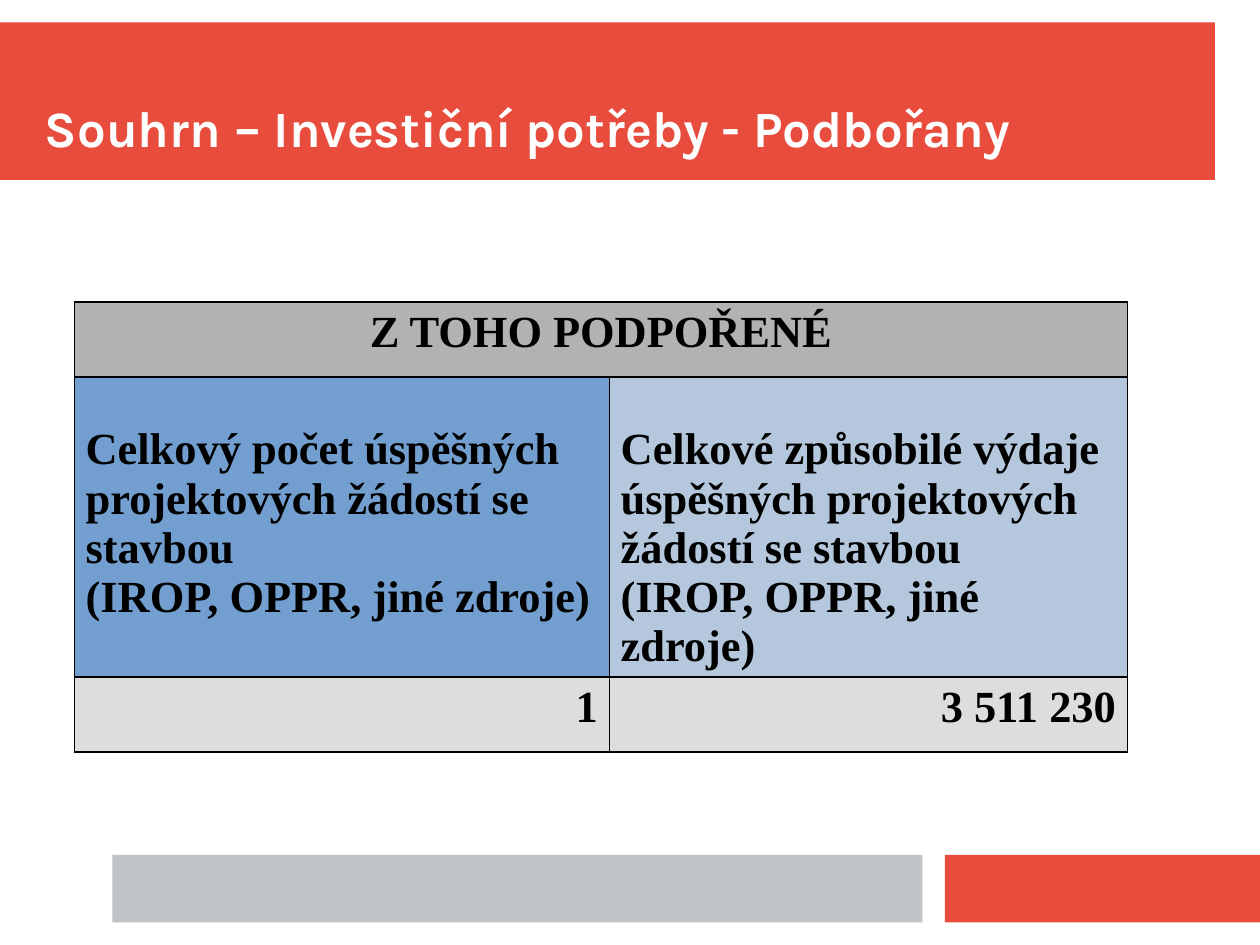
from dataclasses import dataclass

from lxml import etree
from pptx import Presentation
from pptx import util as u
from pptx.dml.color import RGBColor
from pptx.enum import shapes, text
from pptx.oxml import ns

COLUMNS, ROWS = 28, 21
WIDTH, HEIGHT = u.Cm(28), u.Cm(21)


@dataclass(frozen=True)
class Theme:
    red: str = "E74C3C"
    silver: str = "BDC3C7"
    white: str = "FFFFFF"
    black: str = "000000"
    heading: str = "B2B2B2"
    count: str = "729FCF"
    expense: str = "B4C7DC"
    values: str = "DDDDDD"
    title_font: str = "Karla"
    table_font: str = "Times New Roman"
    title_size: int = 32
    table_size: int = 28
    border: float = 1


THEME = Theme()


def across(columns):
    return round(WIDTH * columns / COLUMNS)


def down(rows):
    return round(HEIGHT * rows / ROWS)


def grid(left, top, width, height):
    return across(left), down(top), across(width), down(height)


def write(frame, lines, font=THEME.table_font, size=THEME.table_size,
          color=THEME.black, align=text.PP_ALIGN.LEFT):
    for index, line in enumerate(lines):
        para = frame.paragraphs[0] if index == 0 else frame.add_paragraph()
        para.alignment = align
        span = para.add_run()
        span.text = line
        span.font.name = font
        span.font.size = u.Pt(size)
        span.font.bold = True
        span.font.color.rgb = RGBColor.from_string(color)


def add_band(page, place, color):
    band = page.shapes.add_shape(shapes.MSO_SHAPE.RECTANGLE, *grid(*place))
    band.shadow.inherit = False
    band.fill.solid()
    band.fill.fore_color.rgb = RGBColor.from_string(color)
    band.line.fill.background()


def place_title(page, place, words):
    title = page.shapes.title
    title.element.getparent().append(title.element)
    title.left, title.top, title.width, title.height = grid(*place)
    frame = title.text_frame
    frame.margin_left = frame.margin_right = 0
    frame.margin_top = frame.margin_bottom = 0
    frame.word_wrap = True
    frame.auto_size = text.MSO_AUTO_SIZE.NONE
    frame.vertical_anchor = text.MSO_ANCHOR.BOTTOM
    write(frame, [words], font=THEME.title_font, size=THEME.title_size,
          color=THEME.white)


def style_cell(cell, color):
    properties = cell._tc.get_or_add_tcPr()
    for side in ("a:lnL", "a:lnR", "a:lnT", "a:lnB"):
        line = etree.SubElement(properties, ns.qn(side), w=str(u.Pt(THEME.border)))
        fill = etree.SubElement(line, ns.qn("a:solidFill"))
        etree.SubElement(fill, ns.qn("a:srgbClr"), val=THEME.black)
    cell.fill.solid()
    cell.fill.fore_color.rgb = RGBColor.from_string(color)


def add_summary(page, left, top, widths, heights, colors):
    place = grid(left, top, sum(widths), sum(heights))
    table = page.shapes.add_table(len(heights), len(widths), *place).table
    for column, width in zip(table.columns, widths):
        column.width = across(width)
    for row, height, fills in zip(table.rows, heights, colors):
        row.height = down(height)
        for cell, color in zip(row.cells, fills):
            style_cell(cell, color)
    table.cell(0, 0).merge(table.cell(0, len(widths) - 1))
    return table


def main():
    deck = Presentation()
    deck.slide_width = WIDTH
    deck.slide_height = HEIGHT
    page = deck.slides.add_slide(deck.slide_layouts[5])

    add_band(page, (0, 0.5, 27, 3.5), THEME.red)
    add_band(page, (21, 19, 7, 1.5), THEME.red)
    add_band(page, (2.5, 19, 18, 1.5), THEME.silver)
    place_title(page, (1, 1, 26, 2.5), "Souhrn – Investiční potřeby - Podbořany")

    table = add_summary(
        page, 1.65, 6.71, (11.89, 11.51), (1.67, 6.6, 1.67),
        ((THEME.heading,) * 2, (THEME.count, THEME.expense), (THEME.values,) * 2))
    write(table.cell(0, 0).text_frame, ["Z TOHO PODPOŘENÉ"],
          align=text.PP_ALIGN.CENTER)

    sources = "(IROP, OPPR, jiné zdroje)"
    summary = (
        ("Celkový počet úspěšných projektových žádostí se stavbou", "1"),
        ("Celkové způsobilé výdaje úspěšných projektových žádostí se stavbou",
         "3 511 230"),
    )
    for column, (label, value) in enumerate(summary):
        label_cell = table.cell(1, column)
        label_cell.margin_top = down(1.07)
        write(label_cell.text_frame, [label, sources])
        write(table.cell(2, column).text_frame, [value],
              align=text.PP_ALIGN.RIGHT)

    deck.save("out.pptx")


if __name__ == "__main__":
    main()
